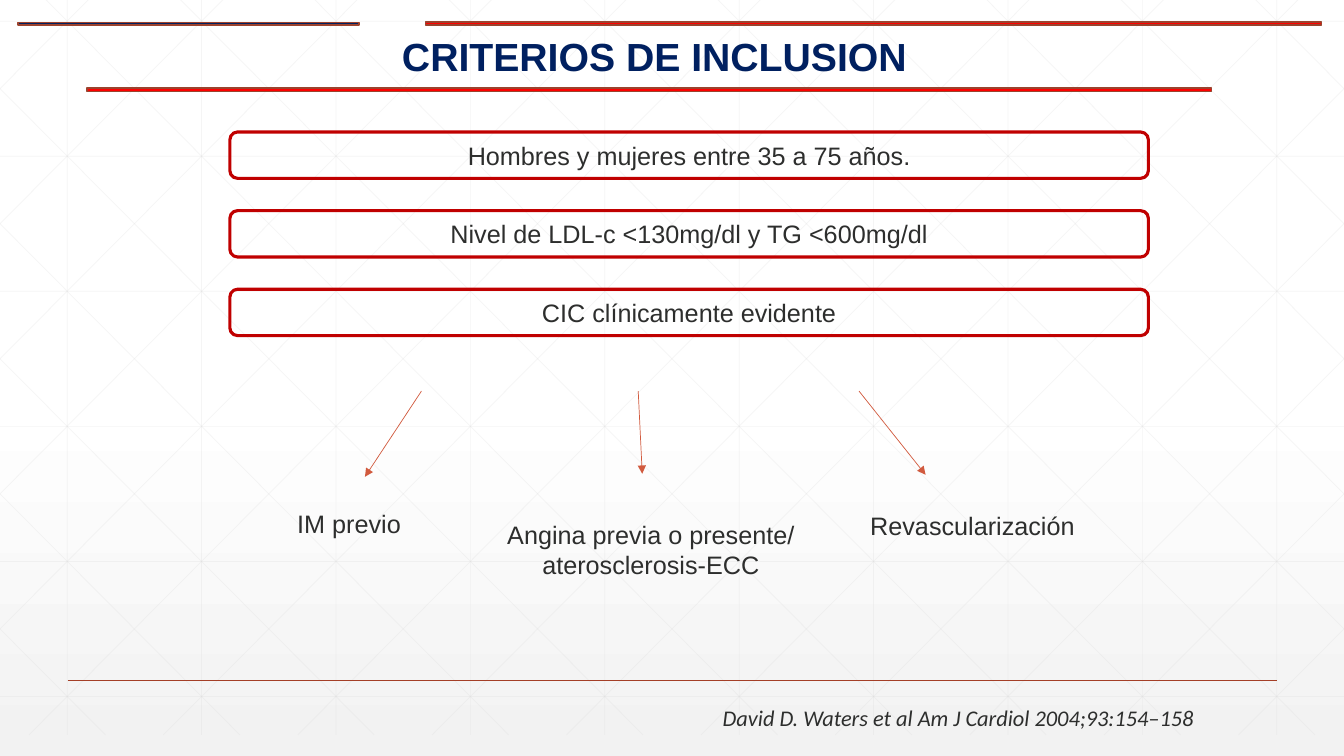
import lxml.etree
import pptx
import pptx.dml.color
import pptx.enum.shapes
import pptx.enum.text
import pptx.oxml.ns
import pptx.util

Inches = pptx.util.Inches
SHAPE = pptx.enum.shapes.MSO_SHAPE
ALIGN = pptx.enum.text.PP_ALIGN
ANCHOR = pptx.enum.text.MSO_ANCHOR

COLORS = {
    "white": "FFFFFF", "fade": "F2F2F2", "grid": "D9D9D9", "navy": "002060",
    "red": "FF0000", "rust": "9B432E", "frame": "C00000", "text": "2D2E2D",
    "footer": "A43F27", "arrow": "D15A3E",
}
FORMATS = {
    "title": {"size": pptx.util.Pt(28), "name": "Arial", "bold": True},
    "body": {"size": pptx.util.Pt(18), "name": "Arial"},
    "citation": {"size": pptx.util.Pt(16), "name": "Calibri", "italic": True},
}
SLIDE_BOX = (0, 0, 13.33, 7.5)
CRITERIA = [
    "Hombres y mujeres entre 35 a 75 años.",
    "Nivel de LDL-c <130mg/dl y TG <600mg/dl",
    "CIC clínicamente evidente",
]
BRANCHES = [
    ("IM previo", (0, 1.11, 1.23, 0.4), ALIGN.LEFT, (1.33, 0, 0.77, 0.85)),
    ("Angina previa o presente/ aterosclerosis-ECC", (1.96, 1.22, 3.29, 0.71),
     ALIGN.CENTER, (3.48, 0, 3.52, 0.82)),
    ("Revascularización", (5.15, 1.13, 3.29, 0.4), ALIGN.CENTER, (5.67, 0, 6.33, 0.83)),
]


def rgb(name):
    """Return the named palette colour."""
    return pptx.dml.color.RGBColor.from_string(COLORS[name])


def add_xml(parent, tag, **attributes):
    """Append a DrawingML element to its parent."""
    return lxml.etree.SubElement(parent, pptx.oxml.ns.qn(tag), attributes)


def place(shape, box):
    """Move and size a shape to a box in inches."""
    for name, value in zip(("left", "top", "width", "height"), box):
        setattr(shape, name, Inches(value))


def write_text(shape, text, style, color="text", align=ALIGN.CENTER,
               anchor=ANCHOR.TOP, wrap=True):
    """Fill a shape with one formatted paragraph."""
    frame = shape.text_frame
    frame.text = text
    settings = {"word_wrap": wrap, "vertical_anchor": anchor,
                "auto_size": pptx.enum.text.MSO_AUTO_SIZE.NONE}
    for name, value in settings.items():
        setattr(frame, name, value)
    paragraph = frame.paragraphs[0]
    paragraph.alignment = align
    font = paragraph.runs[0].font
    for name, value in FORMATS[style].items():
        setattr(font, name, value)
    font.color.rgb = rgb(color)


def add_text(slide, box, text, style, **options):
    """Add a text box."""
    shape = slide.shapes.add_textbox(*map(Inches, box))
    write_text(shape, text, style, **options)


def add_line(slide, points, color, width, opacity=None, arrow=False):
    """Add a straight line, optionally translucent or with an arrowhead."""
    connector = slide.shapes.add_connector(
        pptx.enum.shapes.MSO_CONNECTOR.STRAIGHT, *map(Inches, points))
    line = connector.line
    line.color.rgb = rgb(color)
    line.width = pptx.util.Pt(width)
    properties = connector._element.spPr
    outline = properties.find(pptx.oxml.ns.qn("a:ln"))
    if opacity is not None:
        solid = outline.find(".//" + pptx.oxml.ns.qn("a:srgbClr"))
        add_xml(solid, "a:alpha", val=str(opacity * 1000))
    if arrow:
        add_xml(outline, "a:tailEnd", type="triangle")
    add_xml(properties, "a:effectLst")


def add_shape(slide, kind, box, line_color, line_width, fill_color=None):
    """Add a preset shape without shadow."""
    shape = slide.shapes.add_shape(kind, *map(Inches, box))
    shape.shadow.inherit = False
    if fill_color:
        shape.fill.solid()
        shape.fill.fore_color.rgb = rgb(fill_color)
    else:
        shape.fill.background()
    shape.line.color.rgb = rgb(line_color)
    shape.line.width = pptx.util.Pt(line_width)
    return shape


def build_background(slide, box):
    """Paint the gradient and the faint lattice of straight and diagonal lines."""
    fill = slide.background.fill
    fill.gradient()
    fill.gradient_angle = 270
    for stop, color, position in zip(fill.gradient_stops, ("white", "fade"), (0.53, 1)):
        stop.color.rgb = rgb(color)
        stop.position = position

    left, top, width, height = box
    right = left + width
    start, end = top - 0.21, top + height - 0.21
    step, run = width / 10, 7.46
    slope = height / run
    lattice = [(left + step * (column + 0.5), start, left + step * (column + 0.5), end)
               for column in range(10)]
    lattice += [(left, top + 0.21 + 1.34 * row, right, top + 0.21 + 1.34 * row)
                for row in range(6)]
    for index in range(-5, 10):
        origin = left + 0.25 + step * index
        first, last = max(origin, left), min(origin + run, right)
        upper, lower = (start + (x - origin) * slope for x in (first, last))
        lattice.append((first, upper, last, lower))
        lattice.append((left + right - first, upper, left + right - last, lower))
    for points in lattice:
        add_line(slide, points, "grid", 0.5, opacity=25)


def build_header(slide, box):
    """Place the title and the bars around it."""
    left, top, width, height = box
    title = slide.shapes.title
    slide.shapes._spTree.append(title._element)
    place(title, (left + 2.9, top + 0.1, 7.18, 0.57))
    write_text(title, "CRITERIOS DE INCLUSION", "title", color="navy")
    bars = [((-0.43, 0.01, 4.6, 0.11), "navy"), ((2.62, 0, 12.09, 0.13), "red"),
            ((-1.15, 0.65, 15.18, 0.14), "red")]
    for (x, y, bar_width, bar_height), color in bars:
        add_shape(slide, SHAPE.MATH_MINUS, (left + x, top + y, bar_width, bar_height),
                  "rust", 1, color)


def build_criteria(slide, box):
    """Stack the framed criteria at equal steps."""
    left, top, width, height = box
    frame_height = 0.46
    step = (height - frame_height) / (len(CRITERIA) - 1)
    for row, text in enumerate(CRITERIA):
        shape = add_shape(slide, SHAPE.ROUNDED_RECTANGLE,
                          (left, top + row * step, width, frame_height), "frame", 2.25)
        write_text(shape, text, "body", anchor=ANCHOR.MIDDLE)


def build_branches(slide, box):
    """Draw the arrows and the label each one leads to."""
    left, top = box[:2]
    for text, (x, y, width, height), align, (x1, y1, x2, y2) in BRANCHES:
        add_line(slide, (left + x1, top + y1, left + x2, top + y2), "arrow", 0.5, arrow=True)
        add_text(slide, (left + x, top + y, width, height), text, "body", align=align)


def build_footer(slide, box):
    """Place the rule and the citation."""
    left, top, width, height = box
    add_line(slide, (left, top, left + width, top), "footer", 1)
    add_text(slide, (left + 6.4, top + 0.19, 5.1, 0.37),
             "David D. Waters et al Am J Cardiol 2004;93:154–158", "citation",
             align=ALIGN.LEFT, wrap=False)


def main():
    """Build the slide and save it."""
    presentation = pptx.Presentation()
    presentation.slide_width = Inches(SLIDE_BOX[2])
    presentation.slide_height = Inches(SLIDE_BOX[3])
    slide = presentation.slides.add_slide(presentation.slide_layouts[5])
    build_background(slide, SLIDE_BOX)
    build_header(slide, (0, 0.17, 13.33, 0.79))
    build_criteria(slide, (2.28, 1.31, 9.11, 2.02))
    build_branches(slide, (2.85, 3.88, 8.54, 1.93))
    build_footer(slide, (0.67, 6.75, 12, 0.56))
    presentation.save("out.pptx")


if __name__ == "__main__":
    main()
